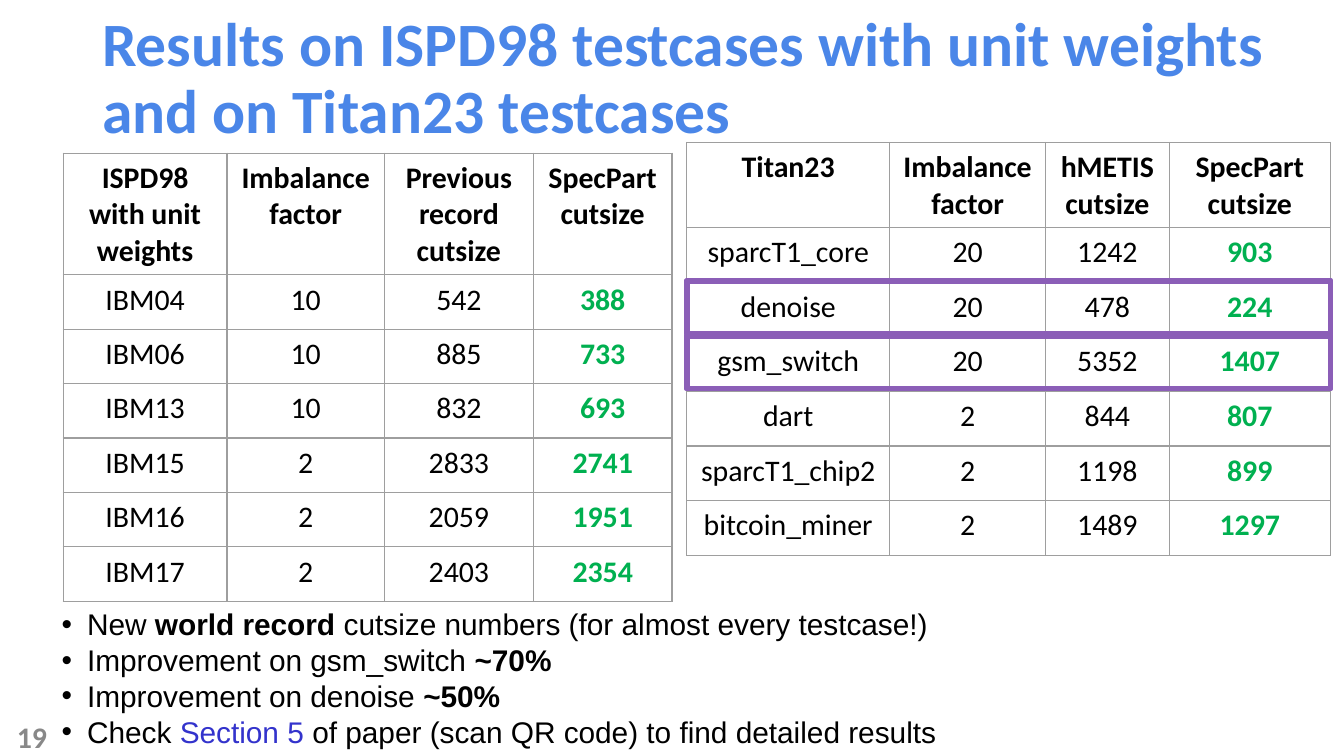
from lxml import etree
from pptx import Presentation
from pptx.dml.color import RGBColor
from pptx.enum.shapes import MSO_SHAPE
from pptx.enum.text import MSO_ANCHOR, MSO_AUTO_SIZE, PP_ALIGN
from pptx.oxml.ns import qn
from pptx.util import Inches, Pt

FRAME = MSO_SHAPE.FRAME
MIDDLE, TOP = MSO_ANCHOR.MIDDLE, MSO_ANCHOR.TOP
CENTER, RIGHT, LEFT = PP_ALIGN.CENTER, PP_ALIGN.RIGHT, PP_ALIGN.LEFT
FIXED = MSO_AUTO_SIZE.NONE

BLACK, WHITE, GREEN = "000000", "FFFFFF", "00B050"
BLUE, LINK, PURPLE = "4A86E8", "3333CC", "8B5EB7"
GRAY, RULE = "888888", "9E9E9E"

TITLE = "Results on ISPD98 testcases with unit weights and on Titan23 testcases"
TABLES = [
    {"box": (0.47, 1.14, 4.53, 3.33), "head": 0.9, "cols": (1.22, 1.17, 1.11, 1.03),
     "rows": [
         ("ISPD98 with unit weights", "Imbalance factor", "Previous record cutsize", "SpecPart cutsize"),
         ("IBM04", "10", "542", "388"),
         ("IBM06", "10", "885", "733"),
         ("IBM13", "10", "832", "693"),
         ("IBM15", "2", "2833", "2741"),
         ("IBM16", "2", "2059", "1951"),
         ("IBM17", "2", "2403", "2354")]},
    {"box": (5.11, 1.06, 4.79, 3.07), "head": 0.63, "cols": (1.51, 1.16, 0.92, 1.2),
     "rows": [
         ("Titan23", "Imbalance factor", "hMETIS cutsize", "SpecPart cutsize"),
         ("sparcT1_core", "20", "1242", "903"),
         ("denoise", "20", "478", "224"),
         ("gsm_switch", "20", "5352", "1407"),
         ("dart", "2", "844", "807"),
         ("sparcT1_chip2", "2", "1198", "899"),
         ("bitcoin_miner", "2", "1489", "1297")]},
]
MARKS = [(5.11, 2.5, 4.79, 0.39), (5.11, 2.09, 4.79, 0.39)]
NOTES = [
    [("New ", BLACK, False), ("world record ", BLACK, True),
     ("cutsize numbers (for almost every testcase!)", BLACK, False)],
    [("Improvement on gsm_switch ", BLACK, False), ("~70%", BLACK, True)],
    [("Improvement on denoise ", BLACK, False), ("~50%", BLACK, True)],
    [("Check ", BLACK, False), ("Section 5", LINK, False),
     (" of paper (scan QR code) to find detailed results", BLACK, False)],
]


def paint(color, code):
    color.rgb = RGBColor.from_string(code)


def place(box):
    return [Inches(n) for n in box]


def write(para, text, code=BLACK, bold=False, size=16, face="Calibri"):
    run = para.add_run()
    run.text = text
    font = run.font
    font.name, font.size, font.bold = face, Pt(size), bold
    paint(font.color, code)


def setup(frame, pad, anchor):
    frame.word_wrap = True
    frame.auto_size = FIXED
    frame.vertical_anchor = anchor
    frame.margin_left = frame.margin_right = Inches(pad[0])
    frame.margin_top = frame.margin_bottom = Inches(pad[1])


def border(cell):
    props = cell._tc.get_or_add_tcPr()
    for spot, side in enumerate(("lnL", "lnR", "lnT", "lnB")):
        line = etree.Element(qn("a:" + side), w=str(Pt(0.75)))
        fill = etree.SubElement(line, qn("a:solidFill"))
        etree.SubElement(fill, qn("a:srgbClr"), val=RULE)
        props.insert(spot, line)


def bullet(para):
    props = para._p.get_or_add_pPr()
    props.set("marL", str(Inches(0.35)))
    props.set("indent", str(Inches(-0.19)))
    color = etree.SubElement(props, qn("a:buClr"))
    etree.SubElement(color, qn("a:srgbClr"), val=BLACK)
    etree.SubElement(props, qn("a:buFont"), typeface="Arial")
    etree.SubElement(props, qn("a:buChar"), char="•")


def add_grid(slide, data):
    rows, cols = data["rows"], data["cols"]
    table = slide.shapes.add_table(len(rows), len(cols), *place(data["box"])).table
    for col, width in zip(table.columns, cols):
        col.width = Inches(width)
    step = (data["box"][3] - data["head"]) / (len(rows) - 1)
    for r, row in enumerate(rows):
        table.rows[r].height = Inches(step if r else data["head"])
        for c, text in enumerate(row):
            cell = table.cell(r, c)
            cell.margin_bottom = Inches(0.04)
            cell.fill.solid()
            paint(cell.fill.fore_color, WHITE)
            border(cell)
            para = cell.text_frame.paragraphs[0]
            para.alignment = CENTER
            best = r > 0 and c == len(cols) - 1
            write(para, text, GREEN if best else BLACK, best or r == 0)


def main():
    deck = Presentation()
    deck.slide_width = Inches(10)
    deck.slide_height = deck.slide_width * 9 // 16
    slide = deck.slides.add_slide(deck.slide_layouts[5])
    shapes = slide.shapes

    title = shapes.title
    title.left, title.top, title.width, title.height = place((0.69, 0.05, 9.46, 1.09))
    setup(title.text_frame, (0.07, 0.04), MIDDLE)
    para = title.text_frame.paragraphs[0]
    para.alignment, para.line_spacing = LEFT, 0.9
    write(para, TITLE, BLUE, True, 33)

    frame = shapes.add_textbox(*place((0.2, 4.41, 7.26, 1.28))).text_frame
    setup(frame, (0.1, 0.1), TOP)
    for i, note in enumerate(NOTES):
        para = frame.add_paragraph() if i else frame.paragraphs[0]
        bullet(para)
        for text, code, bold in note:
            write(para, text, code, bold, face="Arial")

    for data in TABLES:
        add_grid(slide, data)

    for box in MARKS:
        mark = shapes.add_shape(FRAME, *place(box))
        mark.adjustments[0] = 0
        mark.shadow.inherit = False
        mark.fill.solid()
        paint(mark.fill.fore_color, GREEN)
        paint(mark.line.color, PURPLE)
        mark.line.width = Pt(3)

    frame = shapes.add_textbox(*place((-1.83, 5.33, 2.25, 0.3))).text_frame
    setup(frame, (0.07, 0.04), MIDDLE)
    para = frame.paragraphs[0]
    para.alignment = RIGHT
    write(para, "19", GRAY, True)

    deck.save("out.pptx")


if __name__ == "__main__":
    main()
